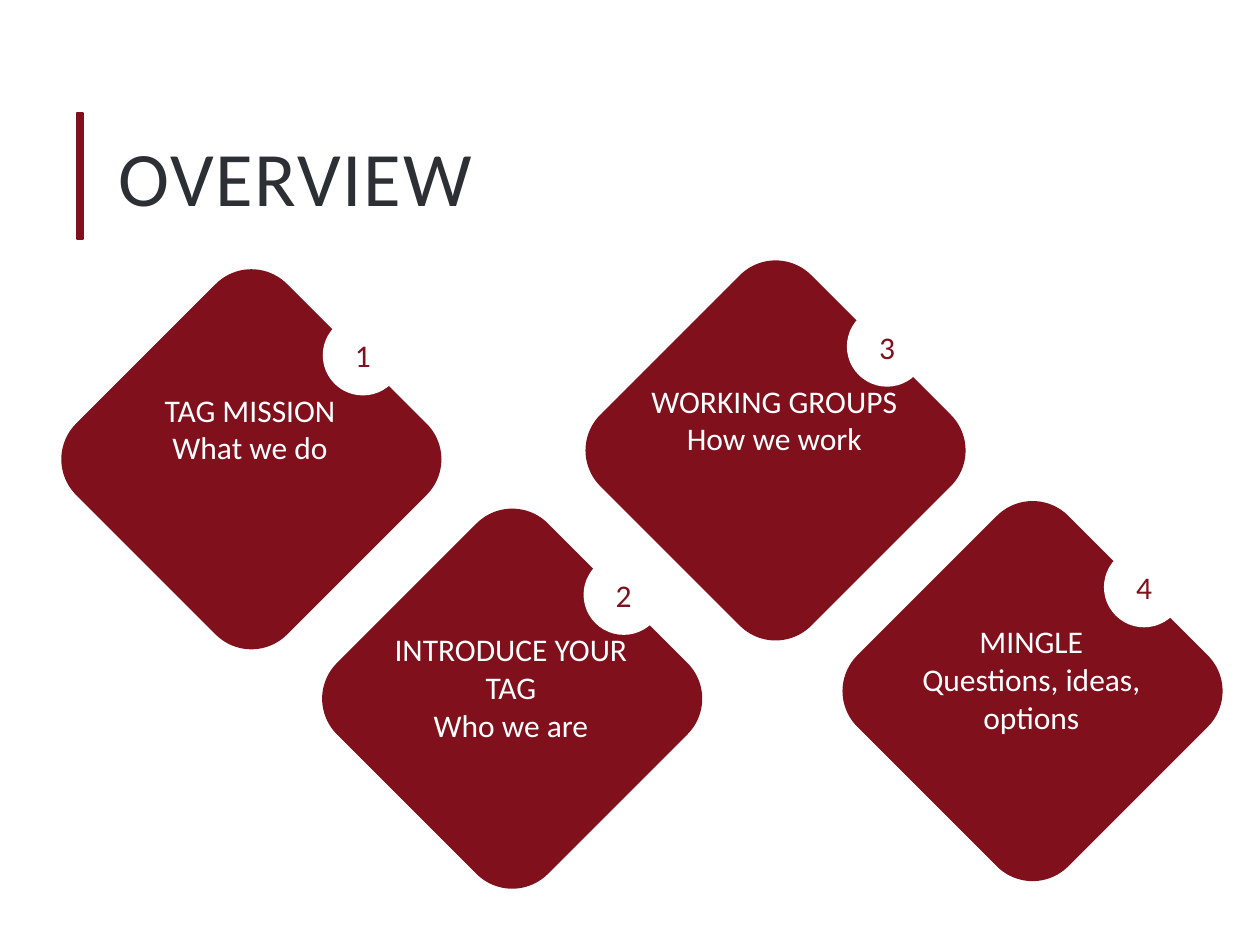
"""Build the overview slide with four numbered diamonds."""
from pptx import Presentation
from pptx import util as u
from pptx.dml.color import RGBColor
from pptx.enum import shapes, text

MAROON = RGBColor(0x80, 0x10, 0x1C)
WHITE = RGBColor(0xFF, 0xFF, 0xFF)
CHARCOAL = RGBColor(0x2C, 0x2F, 0x34)
DIAMOND_SIZE, BADGE_SIZE = 2.35, 0.62
TOPICS = [
    (0.82, 2.47, 0.71, "TAG MISSION\nWhat we do"),
    (2.89, 4.37, 1.01, "INTRODUCE YOUR TAG\nWho we are"),
    (4.98, 2.40, 1.01, "WORKING GROUPS\nHow we work"),
    (7.02, 4.31, 1.01, "MINGLE\nQuestions, ideas, options"),
]


def add_filled(kind, left, top, width, height, color):
    shape = slide.shapes.add_shape(
        kind, u.Inches(left), u.Inches(top), u.Inches(width), u.Inches(height))
    shape.shadow.inherit = False
    shape.fill.solid()
    shape.fill.fore_color.rgb = color
    shape.line.color.rgb = color
    shape.line.width = u.Pt(1.25)
    return shape


def write(shape, wording, size, color, alignment):
    shape.text_frame.text = wording
    shape.text_frame.word_wrap = True
    for paragraph in shape.text_frame.paragraphs:
        paragraph.alignment = alignment
        for run in paragraph.runs:
            run.font.name = "Calibri"
            run.font.size = u.Pt(size)
            run.font.color.rgb = color


presentation = Presentation()
presentation.slide_width = u.Inches(10)
presentation.slide_height = u.Inches(7.5)
slide = presentation.slides.add_slide(presentation.slide_layouts[5])

title = slide.shapes.title
title.left, title.top = u.Inches(0.84), u.Inches(0.64)
title.width, title.height = u.Inches(7.97), u.Inches(1.64)
write(title, "OVERVIEW", 44, CHARCOAL, text.PP_ALIGN.LEFT)
title.text_frame.vertical_anchor = text.MSO_ANCHOR.MIDDLE
title_paragraph = title.text_frame.paragraphs[0]
title_paragraph.line_spacing = 0.8
title_paragraph.runs[0].font._element.set("spc", "100")

for number, (left, top, label_height, wording) in enumerate(TOPICS, 1):
    diamond = add_filled(shapes.MSO_SHAPE.ROUNDED_RECTANGLE, left, top,
                         DIAMOND_SIZE, DIAMOND_SIZE, MAROON)
    diamond.rotation = 45

    badge = add_filled(shapes.MSO_SHAPE.OVAL, left + 1.75, top + 0.04,
                       BADGE_SIZE, BADGE_SIZE, WHITE)
    write(badge, str(number), 18, MAROON, text.PP_ALIGN.CENTER)
    badge.text_frame.vertical_anchor = text.MSO_ANCHOR.MIDDLE

    label = slide.shapes.add_textbox(u.Inches(left + 0.04), u.Inches(top + 0.58),
                                     u.Inches(2.25), u.Inches(label_height))
    write(label, wording, 18, WHITE, text.PP_ALIGN.CENTER)
    label.text_frame.auto_size = text.MSO_AUTO_SIZE.SHAPE_TO_FIT_TEXT

add_filled(shapes.MSO_SHAPE.RECTANGLE, 0.61, 0.9, 0.05, 1, MAROON)

presentation.save("out.pptx")
